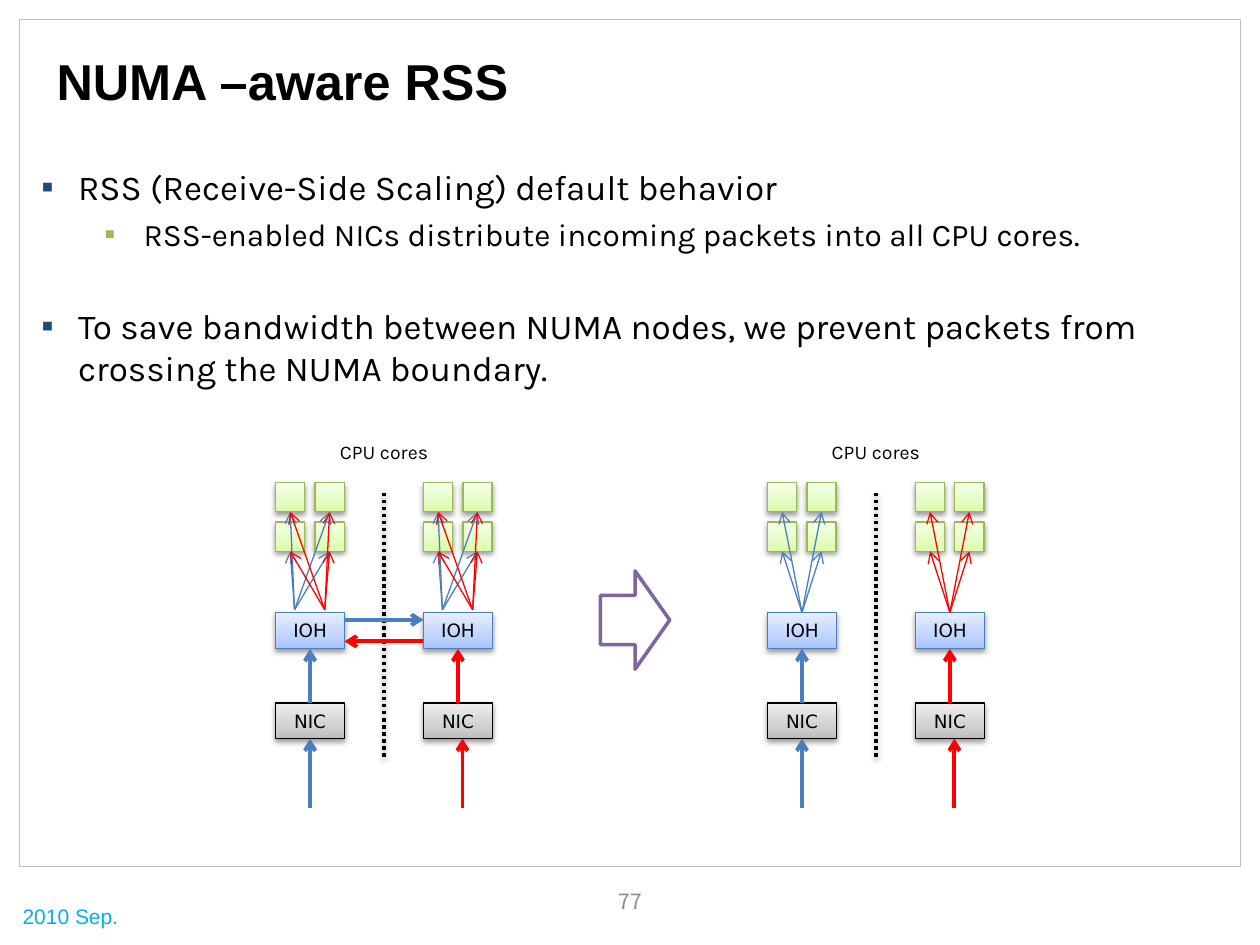
import copy
import dataclasses

import lxml.etree
import pptx
import pptx.dml.color
import pptx.enum.dml
import pptx.enum.shapes
import pptx.enum.text
import pptx.oxml.ns
import pptx.util

Pt = pptx.util.Pt
qn = pptx.oxml.ns.qn
RECTANGLE = pptx.enum.shapes.MSO_SHAPE.RECTANGLE
ANCHOR = pptx.enum.text.MSO_ANCHOR
ALIGN = pptx.enum.text.PP_ALIGN
TOP, BOTTOM = 0, 2


@dataclasses.dataclass(frozen=True)
class Theme:
    ink: str = "000000"
    frame: str = "BFBFBF"
    date: str = "00B0F0"
    page: str = "8C8C8C"
    blue: str = "4B7EBC"
    red: str = "FF0000"
    purple: str = "8064A2"
    white: str = "FFFFFF"
    core_line: str = "98B955"
    core_fill: tuple = ("DAFDA7", "E4FCC2", "F5FFE7")
    ioh_fill: tuple = ("A4C4FF", "BFD4FF", "E6EEFF")
    nic_fill: tuple = ("BDBDBD", "D1D1D1", "EEEEEE")
    bullets: tuple = ("1F497D", "9BBB59")
    body_sizes: tuple = (20, 18)
    title_size: float = 28.8
    footer_size: float = 12
    label_size: float = 11.1
    node_size: float = 10.5
    thin: float = 0.75
    thick: float = 2.25
    medium: float = 2
    heading_font: str = "Arial"
    body_font: str = "Karla"
    node_font: str = "DejaVu Sans"
    page_font: str = "Noto Sans CJK KR"


THEME = Theme()
INDENTS = ((20.9, -20.9), (58.3, -22.3))
CORE, CORE_PITCH, CORE_TOP = 16.7, 22.5, 275.8
NODE_WIDTH, NODE_PITCH = 39.4, 84.5
IOH_TOP, IOH_HEIGHT = 350, 20.8
NIC_TOP, NIC_HEIGHT = 401.8, 20.3
WIRE_START = 461.5


def rgb(value):
    return pptx.dml.color.RGBColor.from_string(value)


def box(values):
    return [Pt(value) for value in values]


def style_text(paragraph, font, size, color, bold=False):
    for run in paragraph.runs:
        run.font.name = font
        run.font.size = Pt(size)
        run.font.color.rgb = rgb(color)
        run.font.bold = bold


def add_text(slide, place, text, font, size, color, align=ALIGN.LEFT, anchor=ANCHOR.TOP, bold=False):
    frame = slide.shapes.add_textbox(*box(place)).text_frame
    frame.word_wrap = True
    frame.vertical_anchor = anchor
    frame.text = text
    frame.paragraphs[0].alignment = align
    style_text(frame.paragraphs[0], font, size, color, bold)


def add_bullets(slide, place, points):
    frame = slide.shapes.add_textbox(*box(place)).text_frame
    frame.word_wrap = True
    frame.text = "\n".join(text for _, _, text in points)
    for paragraph, (level, gap, _) in zip(frame.paragraphs, points):
        paragraph.level = level
        margin, indent = INDENTS[level]
        properties = paragraph._p.get_or_add_pPr()
        properties.set("marL", str(Pt(margin)))
        properties.set("indent", str(Pt(indent)))
        color = lxml.etree.SubElement(properties, qn("a:buClr"))
        lxml.etree.SubElement(color, qn("a:srgbClr"), val=THEME.bullets[level])
        lxml.etree.SubElement(properties, qn("a:buFont"), typeface=THEME.heading_font)
        lxml.etree.SubElement(properties, qn("a:buChar"), char="▪")
        paragraph.space_before = Pt(gap)
        style_text(paragraph, THEME.body_font, THEME.body_sizes[level], THEME.ink)


def add_outline(slide, preset, place, line, width, fill=None):
    shape = slide.shapes.add_shape(preset, *box(place))
    shape.shadow.inherit = False
    shape.line.color.rgb = rgb(line)
    shape.line.width = Pt(width)
    if fill:
        shape.fill.solid()
        shape.fill.fore_color.rgb = rgb(fill)
    else:
        shape.fill.background()
    return shape


def cast_shadow(effects):
    shadow = lxml.etree.SubElement(
        effects, qn("a:outerShdw"), blurRad=str(Pt(3.1)), dist=str(Pt(1.6)),
        dir="5400000", rotWithShape="0")
    color = lxml.etree.SubElement(shadow, qn("a:srgbClr"), val=THEME.ink)
    lxml.etree.SubElement(color, qn("a:alpha"), val="38000")


def add_unit(slide, place, colors, line, text=""):
    unit = add_outline(slide, RECTANGLE, place, line, THEME.thin)
    unit.fill.gradient()
    unit.fill.gradient_angle = 90
    stops = unit._element.spPr.find(".//" + qn("a:gsLst"))
    stops.append(copy.deepcopy(stops[0]))
    for stop, position, color in zip(unit.fill.gradient_stops, (0, 0.35, 1), colors):
        stop.position = position
        stop.color.rgb = rgb(color)
    cast_shadow(unit._element.spPr.find(qn("a:effectLst")))
    if text:
        unit.text_frame.text = text
        unit.text_frame.vertical_anchor = ANCHOR.MIDDLE
        unit.text_frame.paragraphs[0].alignment = ALIGN.CENTER
        style_text(unit.text_frame.paragraphs[0], THEME.node_font, THEME.node_size, THEME.ink)
    return unit


def add_line(slide, start, end, color, width):
    line = slide.shapes.add_connector(
        pptx.enum.shapes.MSO_CONNECTOR.STRAIGHT, *box((*start, *end)))
    line.line.color.rgb = rgb(color)
    line.line.width = Pt(width)
    lxml.etree.SubElement(line._element.spPr, qn("a:effectLst"))
    return line


def add_arrow(slide, start, end, color, width, source=None, target=None):
    arrow = add_line(slide, start, end, color, width)
    lxml.etree.SubElement(arrow.line._get_or_add_ln(), qn("a:tailEnd"), type="arrow")
    if source:
        arrow.begin_connect(source, TOP)
    if target:
        arrow.end_connect(target, BOTTOM)


def add_divider(slide, x):
    divider = add_line(slide, (x, 281.5), (x, 433.5), THEME.ink, THEME.medium)
    divider.line.dash_style = pptx.enum.dml.MSO_LINE.ROUND_DOT
    cast_shadow(divider._element.spPr.find(qn("a:effectLst")))


def add_numa_node(slide, left, color, entry):
    cores = [add_unit(slide, (left + column * CORE_PITCH, CORE_TOP + row * CORE_PITCH, CORE, CORE),
                      THEME.core_fill, THEME.core_line)
             for row in (1, 0) for column in (0, 1)]
    ioh = add_unit(slide, (left, IOH_TOP, NODE_WIDTH, IOH_HEIGHT), THEME.ioh_fill, THEME.blue, "IOH")
    nic = add_unit(slide, (left, NIC_TOP, NODE_WIDTH, NIC_HEIGHT), THEME.nic_fill, THEME.ink, "NIC")
    middle = left + NODE_WIDTH / 2
    add_arrow(slide, (middle, NIC_TOP), (middle, IOH_TOP), color, THEME.thick, nic, ioh)
    x = left + entry
    centered = entry == NODE_WIDTH / 2
    add_arrow(slide, (x, WIRE_START), (x, NIC_TOP + NIC_HEIGHT), color, THEME.thick,
              target=nic if centered else None)
    return cores, ioh


def add_fan(slide, start, cores, color, source=None):
    for core in cores:
        add_arrow(slide, start, start, color, THEME.thin, source, core)


def add_diagram(slide, left, crossing):
    add_divider(slide, left + 62)
    add_text(slide, (left + 28.1, 247.7, 67.7, 22.3), "CPU cores", THEME.body_font,
             THEME.label_size, THEME.ink, ALIGN.CENTER)
    lefts = (left, left + NODE_PITCH)
    colors = (THEME.blue, THEME.red)
    nodes = [add_numa_node(slide, x, color, entry)
             for x, color, entry in zip(lefts, colors, (NODE_WIDTH / 2, 22.3))]
    if not crossing:
        for (cores, ioh), color in zip(nodes, colors):
            add_fan(slide, (left, IOH_TOP), cores, color, ioh)
        return
    for color, offset in zip(colors, (10.8, 28.1)):
        for x, (cores, _) in zip(lefts, nodes):
            add_fan(slide, (x + offset, 348.5), cores, color)
    inner, outer = left + NODE_WIDTH, left + NODE_PITCH
    add_arrow(slide, (inner, 354.2), (outer, 354.2), THEME.blue, THEME.thick)
    add_arrow(slide, (outer, 366.5), (inner, 366.5), THEME.red, THEME.thick)


def main():
    deck = pptx.Presentation()
    deck.slide_width, deck.slide_height = Pt(720), Pt(540)
    slide = deck.slides.add_slide(deck.slide_layouts[6])
    add_outline(slide, RECTANGLE, (11.3, 11.3, 697.5, 483.8), THEME.frame, THEME.thin)
    add_text(slide, (5.8, 498.2, 70, 36), "2010 Sep.", THEME.heading_font,
             THEME.footer_size, THEME.date, anchor=ANCHOR.BOTTOM)
    add_text(slide, (25.2, 25.9, 669, 39.6), "NUMA –aware RSS", THEME.heading_font,
             THEME.title_size, THEME.ink, anchor=ANCHOR.MIDDLE, bold=True)
    add_bullets(slide, (16.6, 91.2, 686, 140), (
        (0, 0, "RSS (Receive-Side Scaling) default behavior"),
        (1, 4.2, "RSS-enabled NICs distribute incoming packets into all CPU cores."),
        (0, 29.5, "To save bandwidth between NUMA nodes, we prevent packets from crossing the NUMA boundary."),
    ))
    add_text(slide, (276.5, 500.4, 167.8, 28.8), "77", THEME.page_font,
             THEME.footer_size, THEME.page, ALIGN.CENTER, ANCHOR.MIDDLE)
    add_diagram(slide, 157.5, crossing=True)
    add_diagram(slide, 438.6, crossing=False)
    add_outline(slide, pptx.enum.shapes.MSO_SHAPE.RIGHT_ARROW, (343.1, 326.2, 39.6, 56.2),
                THEME.purple, THEME.medium, THEME.white)
    deck.save("out.pptx")


if __name__ == "__main__":
    main()
